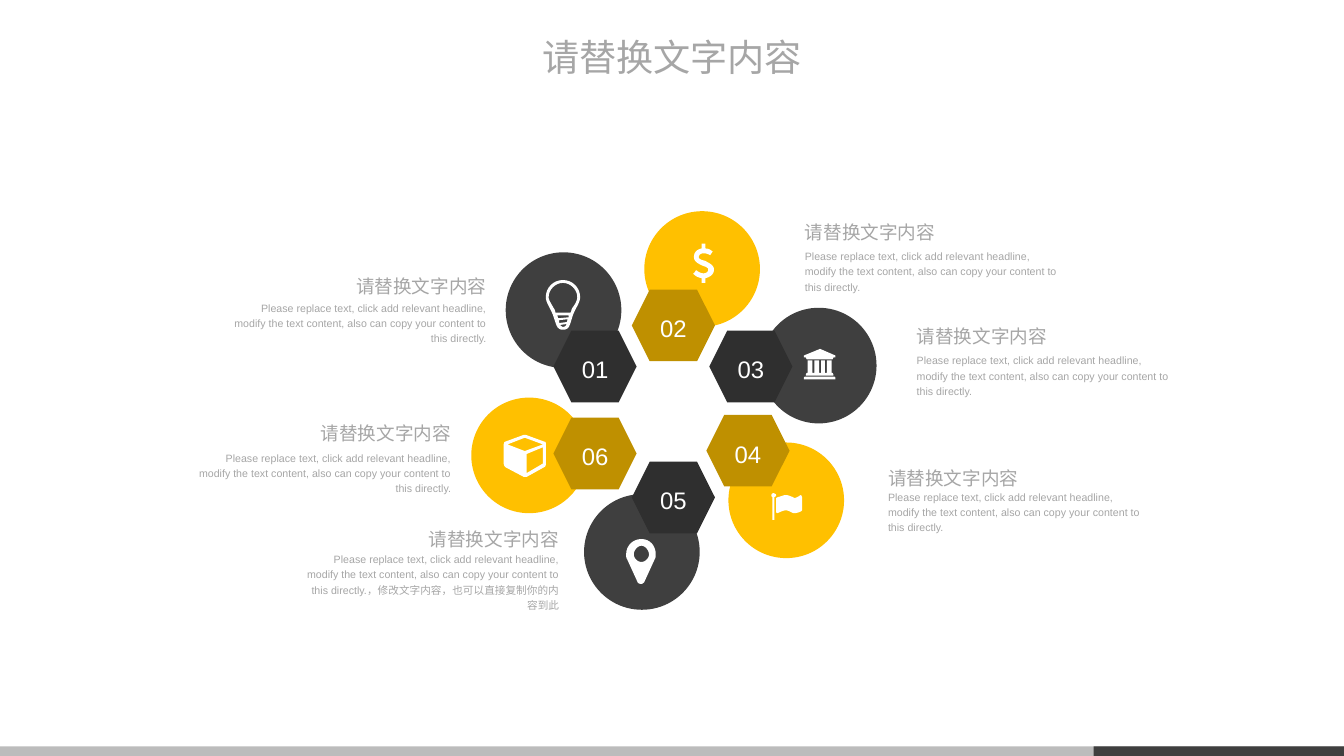
from dataclasses import dataclass

from pptx import Presentation
from pptx.dml.color import RGBColor
from pptx.enum.shapes import MSO_SHAPE as Shape
from pptx.enum.text import MSO_ANCHOR as Anchor, MSO_AUTO_SIZE as AutoSize, PP_ALIGN as Align
from pptx.util import Inches, Pt

WHITE = RGBColor(0xFF, 0xFF, 0xFF)
TEXT_GREY = RGBColor(0xA6, 0xA6, 0xA6)
BAR_GREY = RGBColor(0xBC, 0xBC, 0xBC)
CHARCOAL = RGBColor(0x3F, 0x3F, 0x3F)
DARK_CHARCOAL = RGBColor(0x2F, 0x2F, 0x2F)
GOLD = RGBColor(0xFF, 0xC0, 0x00)
DARK_GOLD = RGBColor(0xBF, 0x90, 0x00)

FONT = "Arial"
HEADING = "请替换文字内容"
BODY = ("Please replace text, click add relevant headline, modify the text content, "
        "also can copy your content to this directly.")
BODY_EXTRA = "，修改文字内容，也可以直接复制你的内容到此"

SLIDE_WIDTH, SLIDE_HEIGHT = 14.06, 7.91
CIRCLE_SIZE = 1.21
HEXAGON_WIDTH, HEXAGON_HEIGHT = 0.87, 0.75
HEADING_WIDTH, HEADING_HEIGHT = 1.72, 0.28
BODY_WIDTH, BODY_HEIGHT = 2.66, 0.47
CURVE_STEPS = 8

# Icon outlines in hundredths of an inch: a pair is a corner, six numbers a Bezier curve
BULB = [
    [(18, 0), (8, 0, 0, 8, 0, 18), (0, 24, 6, 31, 8, 38), (11, 46, 11, 52, 18, 52),
     (25, 52, 25, 47, 28, 38), (30, 31, 36, 24, 36, 18), (36, 8, 28, 0, 18, 0)],
    [(26, 34), (10, 34), (10, 32, 9, 30, 8, 29), (6, 25, 3, 21, 3, 18), (3, 10, 10, 3, 18, 3),
     (26, 3, 33, 10, 33, 18), (33, 21, 31, 25, 28, 29), (27, 30, 27, 32, 26, 34)],
    [(13, 40), (12, 37), (24, 37), (24, 39)],
    [(22, 44), (14, 45), (14, 42), (23, 41)],
    [(18, 49), (17, 49, 16, 48, 15, 47), (22, 46), (21, 48, 20, 49, 18, 49)],
]
DOLLAR = [
    [(13, 36), (13, 41), (9, 41), (9, 36), (3, 35, 1, 32, 1, 32), (0, 32, 0, 31, 1, 31),
     (3, 28), (4, 28), (4, 28, 7, 31, 11, 31), (13, 31, 16, 30, 16, 27),
     (16, 25, 13, 24, 10, 23), (6, 21, 1, 19, 1, 14), (1, 9, 4, 6, 9, 5), (9, 0), (13, 0),
     (13, 5), (18, 5, 20, 8, 20, 8), (21, 8, 21, 8, 20, 9), (18, 12), (18, 12, 15, 10, 11, 10),
     (8, 10, 6, 12, 6, 14), (6, 16, 9, 17, 13, 18), (16, 20, 22, 22, 22, 27),
     (22, 32, 18, 35, 13, 36)],
]
BANK = [
    [(33, 7), (33, 9), (31, 9), (30, 11), (3, 11), (2, 9), (0, 9), (0, 7), (17, 0)],
    [(33, 30), (33, 32), (0, 32), (0, 30), (1, 29), (32, 29)],
    [(9, 12), (9, 25), (11, 25), (11, 12), (16, 12), (16, 25), (18, 25), (18, 12),
     (22, 12), (22, 25), (24, 25), (24, 12), (29, 12), (29, 25), (30, 25), (31, 27),
     (31, 28), (2, 28), (2, 27), (3, 25), (4, 25), (4, 12)],
]
FLAG = [
    [(3, 4), (3, 28), (1, 28), (1, 4), (0, 4, 0, 3, 0, 2), (0, 1, 1, 0, 2, 0),
     (3, 0, 5, 1, 5, 2), (5, 3, 4, 4, 3, 4)],
    [(32, 18), (31, 19), (29, 20, 26, 21, 24, 21), (21, 21, 19, 18, 15, 18),
     (12, 18, 9, 20, 6, 21), (5, 20), (5, 5), (7, 4), (9, 4, 12, 2, 15, 2),
     (18, 2, 19, 3, 22, 4), (23, 4, 23, 5, 24, 5), (27, 5, 30, 2, 31, 2), (32, 4)],
]
PIN = [
    [(30, 21), (19, 45), (18, 46, 17, 47, 16, 47), (14, 47, 12, 46, 12, 45), (1, 21),
     (0, 20, 0, 17, 0, 16), (0, 7, 7, 0, 16, 0), (25, 0, 31, 7, 31, 16),
     (31, 17, 31, 20, 30, 21)],
    [(16, 7), (12, 7, 8, 12, 8, 16), (8, 20, 12, 24, 16, 24), (20, 24, 24, 20, 24, 16),
     (24, 12, 20, 7, 16, 7)],
]
CUBE = [
    [(44, 30), (44, 32, 44, 33, 42, 34), (24, 44), (21, 44), (2, 34), (1, 33, 0, 32, 0, 30),
     (0, 10), (0, 8, 1, 7, 2, 7), (21, 0), (23, 0), (42, 7), (44, 7, 44, 8, 44, 10)],
    [(41, 10), (22, 3), (4, 10), (22, 17)],
    [(41, 30), (41, 13), (24, 20), (24, 40)],
]


@dataclass
class Petal:
    number: str
    circle: tuple
    hexagon: tuple
    icon: list
    icon_at: tuple
    text_edge: float  # the edge that the text is aligned to
    heading_top: float
    body_top: float
    align: Align
    body: str = BODY


PETALS = [
    Petal("01", (5.29, 2.64), (5.79, 3.46), BULB, (5.71, 2.93), 5.09, 2.83, 3.13, Align.RIGHT),
    Petal("02", (6.74, 2.21), (6.61, 3.03), DOLLAR, (7.25, 2.55), 8.42, 2.26, 2.59, Align.LEFT),
    Petal("03", (7.96, 3.22), (7.42, 3.46), BANK, (8.41, 3.65), 9.59, 3.35, 3.68, Align.LEFT),
    Petal("04", (7.62, 4.63), (7.39, 4.34), FLAG, (8.07, 5.16), 9.29, 4.84, 5.11, Align.LEFT),
    Petal("05", (6.11, 5.17), (6.61, 4.83), PIN, (6.55, 5.64), 5.85, 5.48, 5.76, Align.RIGHT,
          BODY + BODY_EXTRA),
    Petal("06", (4.93, 4.16), (5.79, 4.37), CUBE, (5.27, 4.55), 4.72, 4.37, 4.7, Align.RIGHT),
]


def paint(shape, color):
    shape.shadow.inherit = False
    shape.fill.solid()
    shape.fill.fore_color.rgb = color
    shape.line.fill.background()


def add_filled(slide, kind, left, top, width, height, color):
    shape = slide.shapes.add_shape(kind, Inches(left), Inches(top), Inches(width), Inches(height))
    paint(shape, color)
    return shape


def write(frame, text, size, color, align, spacing=1.2):
    paragraph = frame.paragraphs[0]
    paragraph.alignment = align
    paragraph.line_spacing = spacing
    run = paragraph.add_run()
    run.text = text
    run.font.name = FONT
    run.font.size = Pt(size)
    run.font.color.rgb = color


def add_text(slide, left, top, width, height, text, size, align, spacing=1.2):
    box = slide.shapes.add_textbox(Inches(left), Inches(top), Inches(width), Inches(height))
    frame = box.text_frame
    frame.word_wrap = True
    frame.auto_size = AutoSize.SHAPE_TO_FIT_TEXT
    frame.margin_left = frame.margin_top = frame.margin_right = frame.margin_bottom = 0
    write(frame, text, size, TEXT_GREY, align, spacing)


def flatten(contour):
    """Turn corners and Bezier curves into a list of points."""
    points = [contour[0]]
    for segment in contour[1:]:
        if len(segment) == 2:
            points.append(segment)
            continue
        controls = [points[-1], segment[:2], segment[2:4], segment[4:]]
        for step in range(1, CURVE_STEPS + 1):
            t = step / CURVE_STEPS
            weights = ((1 - t) ** 3, 3 * t * (1 - t) ** 2, 3 * t * t * (1 - t), t ** 3)
            points.append(tuple(sum(weight * control[axis] for weight, control
                                    in zip(weights, controls)) for axis in (0, 1)))
    return points


def add_icon(slide, contours, left, top):
    outlines = [[(Inches(left + x / 100), Inches(top + y / 100)) for x, y in flatten(contour)]
                for contour in contours]
    builder = slide.shapes.build_freeform(*outlines[0][0])
    builder.add_line_segments(outlines[0][1:], close=True)
    for outline in outlines[1:]:
        builder.move_to(*outline[0])
        builder.add_line_segments(outline[1:], close=True)
    paint(builder.convert_to_shape(), WHITE)


def add_petal(slide, petal, circle_color, hexagon_color):
    add_filled(slide, Shape.OVAL, *petal.circle, CIRCLE_SIZE, CIRCLE_SIZE, circle_color)
    hexagon = add_filled(slide, Shape.HEXAGON, *petal.hexagon, HEXAGON_WIDTH, HEXAGON_HEIGHT,
                         hexagon_color)
    hexagon.text_frame.vertical_anchor = Anchor.MIDDLE
    write(hexagon.text_frame, petal.number, 18, WHITE, Align.CENTER)
    add_icon(slide, petal.icon, *petal.icon_at)

    # Heading and body share the edge next to the circle
    for text, size, top, width, height in (
            (HEADING, 14, petal.heading_top, HEADING_WIDTH, HEADING_HEIGHT),
            (petal.body, 8, petal.body_top, BODY_WIDTH, BODY_HEIGHT)):
        left = petal.text_edge - (width if petal.align == Align.RIGHT else 0)
        add_text(slide, left, top, width, height, text, size, petal.align)


def main():
    presentation = Presentation()
    presentation.slide_width = Inches(SLIDE_WIDTH)
    presentation.slide_height = Inches(SLIDE_HEIGHT)
    slide = presentation.slides.add_slide(presentation.slide_layouts[6])

    # Footer bar
    add_filled(slide, Shape.RECTANGLE, 0, 7.81, SLIDE_WIDTH, 0.1, BAR_GREY)
    add_filled(slide, Shape.RECTANGLE, 11.44, 7.81, 2.62, 0.1, CHARCOAL)

    # Ring of petals in alternating colours
    for index, petal in enumerate(PETALS):
        colors = (GOLD, DARK_GOLD) if index % 2 else (CHARCOAL, DARK_CHARCOAL)
        add_petal(slide, petal, *colors)

    # Title
    add_text(slide, 5.47, 0.22, 3.12, 0.55, HEADING, 28, Align.CENTER, 1.3)
    presentation.save("out.pptx")


if __name__ == "__main__":
    main()
